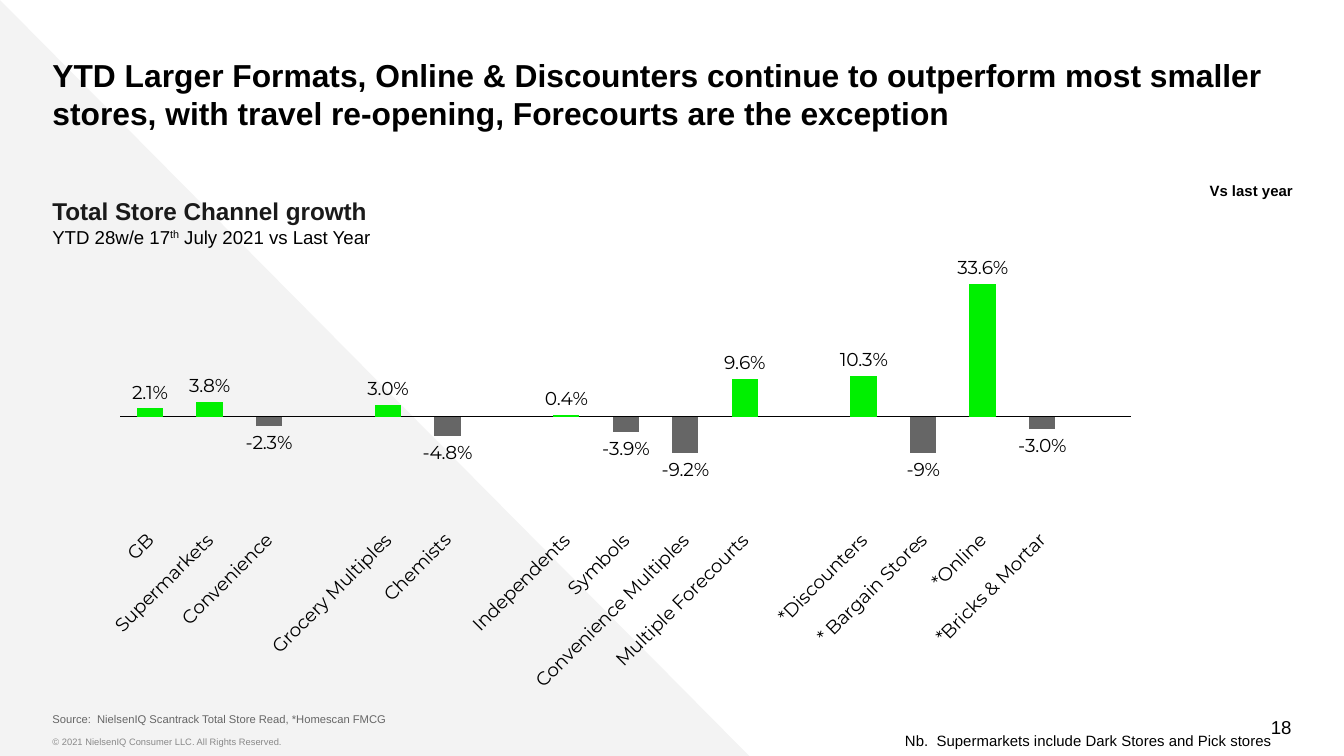
from lxml import etree
from pptx import Presentation
from pptx.chart.data import CategoryChartData
from pptx.dml.color import RGBColor
from pptx.enum.chart import XL_CHART_TYPE, XL_LABEL_POSITION, XL_TICK_LABEL_POSITION, XL_TICK_MARK
from pptx.enum.shapes import MSO_SHAPE
from pptx.enum.text import MSO_ANCHOR, MSO_AUTO_SIZE, PP_ALIGN
from pptx.oxml import parse_xml
from pptx.oxml.ns import nsdecls, qn
from pptx.util import Cm, Pt

COLUMN = XL_CHART_TYPE.COLUMN_CLUSTERED
OUTSIDE_END = XL_LABEL_POSITION.OUTSIDE_END
LOW = XL_TICK_LABEL_POSITION.LOW
NO_TICK = XL_TICK_MARK.NONE
RIGHT_TRIANGLE = MSO_SHAPE.RIGHT_TRIANGLE
TOP, MIDDLE, BOTTOM = MSO_ANCHOR.TOP, MSO_ANCHOR.MIDDLE, MSO_ANCHOR.BOTTOM
LEFT, RIGHT = PP_ALIGN.LEFT, PP_ALIGN.RIGHT
NO_AUTOFIT = MSO_AUTO_SIZE.NONE

MARGIN = 0.99
INSET = 0.25
BLACK, GREY, GREEN = "000000", "666666", "00F000"
GROWTH = [
    ("GB", 0.021), ("Supermarkets", 0.038), ("Convenience", -0.023), (" ", None),
    ("Grocery Multiples", 0.03), ("Chemists", -0.048), ("", None),
    ("Independents", 0.004), ("Symbols", -0.039), ("Convenience Multiples", -0.092),
    ("Multiple Forecourts", 0.096), ("", None), ("*Discounters", 0.103),
    ("* Bargain Stores", -0.091), ("*Online", 0.336), ("*Bricks & Mortar", -0.03),
    ("", None),
]
WHOLE_PERCENT = "* Bargain Stores"


def color(hex_string):
    return RGBColor.from_string(hex_string)


def style(font, size, hex_string=BLACK, bold=False, name="Arial"):
    font.name, font.size, font.bold = name, Pt(size), bold
    font.color.rgb = color(hex_string)


def place(shape, box):
    shape.left, shape.top, shape.width, shape.height = (Cm(v) for v in box)


def set_frame(frame, anchor=TOP, side=0, edge=0.13):
    frame.word_wrap = True
    frame.auto_size = NO_AUTOFIT
    frame.vertical_anchor = anchor
    frame.margin_left = frame.margin_right = Cm(side)
    frame.margin_top = frame.margin_bottom = Cm(edge)


def add_label(slide, box, text, size, hex_string=BLACK, bold=False,
              align=LEFT, anchor=TOP, side=0):
    frame = slide.shapes.add_textbox(*(Cm(v) for v in box)).text_frame
    set_frame(frame, anchor, side)
    frame.text = text
    paragraph = frame.paragraphs[0]
    paragraph.alignment = align
    style(paragraph.runs[0].font, size, hex_string, bold)


def fill_placeholder(holder, box, text, size, hex_string, bold, anchor):
    place(holder, box)
    frame = holder.text_frame
    frame.text = text
    set_frame(frame, anchor, edge=INSET)
    paragraph = frame.paragraphs[0]
    paragraph.alignment = LEFT
    paragraph.space_before = Pt(0)
    style(paragraph.runs[0].font, size, hex_string, bold)


def add_backdrop(slide, box):
    triangle = slide.shapes.add_shape(RIGHT_TRIANGLE, *(Cm(v) for v in box))
    triangle.shadow.inherit = False
    triangle.fill.solid()
    triangle.fill.fore_color.rgb = color("F3F3F3")
    triangle.line.fill.background()
    tree = slide.shapes._spTree
    tree.remove(triangle._element)
    tree.insert(2, triangle._element)


def add_chart_heading(slide, box):
    frame = slide.shapes.add_textbox(*(Cm(v) for v in box)).text_frame
    set_frame(frame)
    paragraph = frame.paragraphs[0]
    paragraph.space_after = Pt(12)
    heading = paragraph.add_run()
    heading.text = "Total Store Channel growth"
    style(heading.font, 13, "1A1A1A", True)
    paragraph.add_line_break()
    for text, baseline in (("YTD 28w/e 17", 0), ("th", 30000), (" July 2021 vs Last Year", 0)):
        period = paragraph.add_run()
        period.text = text
        style(period.font, 10)
        if baseline:
            period._r.get_or_add_rPr().set("baseline", str(baseline))


def set_plot_layout(chart, x, y, w, h):
    plot_area = chart._chartSpace.chart.plotArea
    for layout in plot_area.findall(qn("c:layout")):
        plot_area.remove(layout)
    layout = parse_xml(f"<c:layout {nsdecls('c')}><c:manualLayout/></c:layout>")
    settings = {"layoutTarget": "inner", "xMode": "edge", "yMode": "edge",
                "x": x, "y": y, "w": w, "h": h}
    for tag, value in settings.items():
        etree.SubElement(layout[0], qn(f"c:{tag}")).set("val", str(value))
    plot_area.insert(0, layout)


def format_axes(chart):
    channels = chart.category_axis
    channels.tick_label_position = LOW
    channels.major_tick_mark = channels.minor_tick_mark = NO_TICK
    channels.has_major_gridlines = False
    channels.format.line.color.rgb = color(BLACK)
    channels.format.line.width = Pt(0.75)
    style(channels.tick_labels.font, 10, name="Montserrat")
    channels._element.find(qn("c:txPr")).find(qn("a:bodyPr")).set("rot", "-2700000")
    growth = chart.value_axis
    growth.visible = False
    growth.has_major_gridlines = False
    growth.minimum_scale, growth.maximum_scale = -0.25, 0.45


def add_growth_chart(slide, box):
    data = CategoryChartData(number_format="0.0%")
    data.categories = [channel for channel, _ in GROWTH]
    data.add_series("Series 1", [value for _, value in GROWTH])
    chart = slide.shapes.add_chart(COLUMN, *(Cm(v) for v in box), data).chart
    chart.has_legend = chart.has_title = False
    style(chart.font, 10, name="Montserrat")
    format_axes(chart)
    set_plot_layout(chart, 0.007, 0.031, 0.961, 0.585)

    plot = chart.plots[0]
    plot.gap_width = 125
    plot.vary_by_categories = False
    series = plot.series[0]
    series.invert_if_negative = False
    series.format.fill.solid()
    series.format.fill.fore_color.rgb = color(GREEN)
    labels = series.data_labels
    labels.show_value = True
    labels.number_format, labels.number_format_is_linked = "0.0%", False
    labels.position = OUTSIDE_END
    style(labels.font, 10, name="Montserrat")

    for index, (channel, value) in enumerate(GROWTH):
        point = series.points[index]
        if value is not None and value < 0:
            point.format.fill.solid()
            point.format.fill.fore_color.rgb = color(GREY)
        if channel == WHOLE_PERCENT:
            style(point.data_label.font, 10, name="Montserrat")
            point.data_label.position = OUTSIDE_END
            text_format = labels._element.find(qn("c:dLbl")).find(qn("c:txPr"))
            text_format.addprevious(parse_xml(
                f'<c:numFmt {nsdecls("c")} formatCode="0%" sourceLinked="0"/>'))


def add_footer(slide, box):
    left, top, width, _ = box
    add_label(slide, (left, top + 0.43, 14.07, 0.51),
              "© 2021 NielsenIQ Consumer LLC. All Rights Reserved.", 5, "888888")
    add_label(slide, (left + width - 5.72, top, 5.72, 0.76), "18", 10,
              align=RIGHT, anchor=MIDDLE)
    add_label(slide, (15.98, top + 0.33, 8.31, 0.61),
              "Nb.  Supermarkets include Dark Stores and Pick stores", 8,
              align=RIGHT, side=INSET)


def main():
    deck = Presentation()
    deck.slide_width, deck.slide_height = Cm(25.4), Cm(14.29)
    slide = deck.slides.add_slide(deck.slide_layouts[0])
    title, source = slide.placeholders
    add_backdrop(slide, (0, 0, 14.2, 14.33))
    fill_placeholder(
        title, (MARGIN, 0.81, 24.23, 1.12),
        "YTD Larger Formats, Online & Discounters continue to outperform most smaller "
        "stores, with travel re-opening, Forecourts are the exception",
        17, BLACK, True, TOP)
    fill_placeholder(
        source, (MARGIN, 13.46, 22.66, 0.51),
        "Source:  NielsenIQ Scantrack Total Store Read, *Homescan FMCG",
        6, GREY, False, BOTTOM)
    add_chart_heading(slide, (MARGIN, 3.58, 10.57, 1.24))
    add_growth_chart(slide, (2.08, 4.24, 19.94, 8.94))
    add_label(slide, (22.61, 3.3, 2.21, 0.61), "Vs last year", 8, bold=True, side=INSET)
    add_footer(slide, (MARGIN, 13.36, 23.42, 0.94))
    deck.save("out.pptx")


if __name__ == "__main__":
    main()
